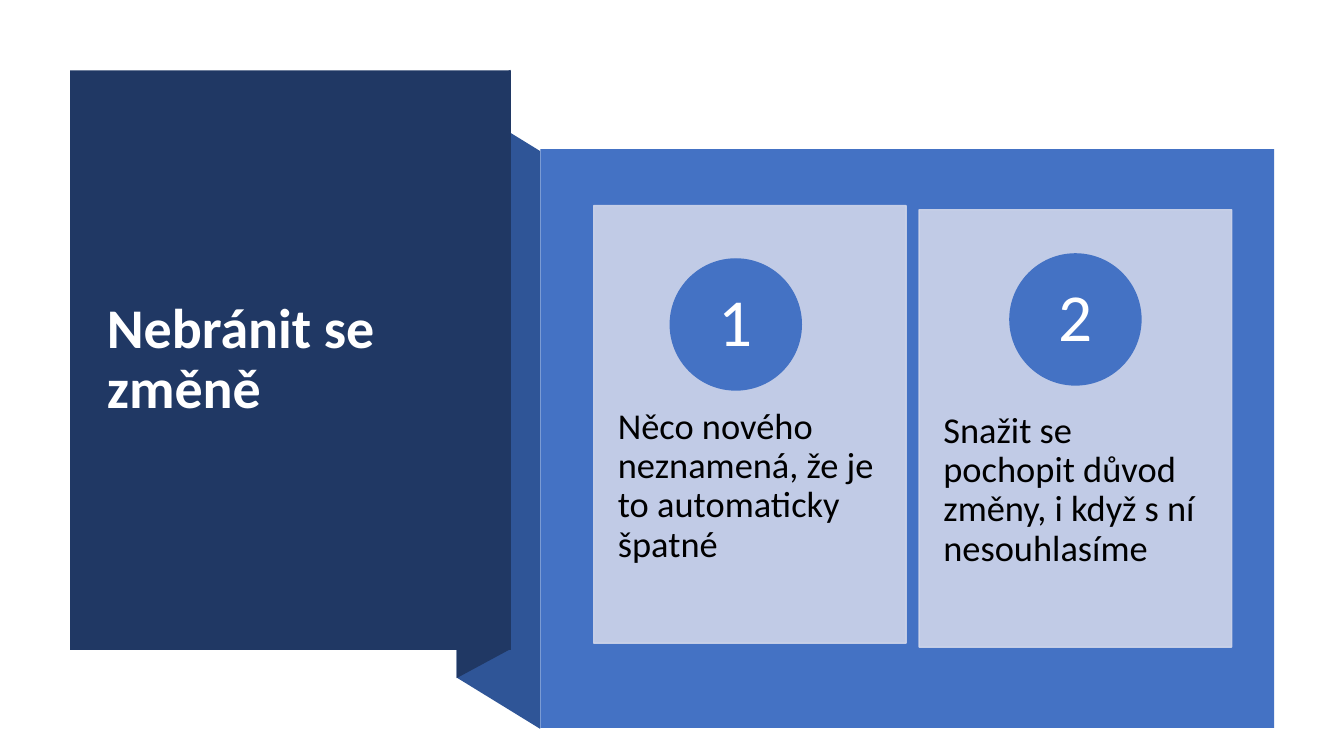
from dataclasses import dataclass

from lxml.etree import SubElement
from pptx import Presentation
from pptx.dml.color import RGBColor
from pptx.enum.shapes import MSO_SHAPE
from pptx.enum.text import MSO_ANCHOR, MSO_AUTO_SIZE, PP_ALIGN
from pptx.oxml.ns import qn
from pptx.util import Pt

COLORS = {
    "navy": "203864",
    "fold": "2F5597",
    "blue": "4472C4",
    "card": "CFD5EA",
    "white": "FFFFFF",
    "black": "000000",
}
FONT = "Calibri"
CARD_W, CARD_H = 223.2, 312.5
CIRCLE = 93.6
BODY_DROP, BODY_H = 118.5, 187.2


@dataclass
class Card:
    number: str
    text: str
    left: float
    top: float
    circle_left: float
    circle_top: float


CARDS = [
    Card("1", "Něco nového neznamená, že je to automaticky špatné",
         424.1, 146.9, 478.8, 185),
    Card("2", "Snažit se pochopit důvod změny, i když s ní nesouhlasíme",
         656.6, 149.8, 721.4, 181.4),
]


def rgb(name: str) -> RGBColor:
    return RGBColor.from_string(COLORS[name])


def paint(sp, color: str, outlined: bool = False) -> None:
    sp.shadow.inherit = False
    sp.fill.solid()
    sp.fill.fore_color.rgb = rgb(color)
    if outlined:
        sp.line.color.rgb = rgb(color)
        sp.line.width = Pt(1)
    else:
        sp.line.fill.background()


def set_alpha(sp, percent: int) -> None:
    """Make the fill and the line of a painted shape partly transparent."""
    for clr in sp.element.spPr.iter(qn("a:srgbClr")):
        SubElement(clr, qn("a:alpha")).set("val", str(percent * 1000))


def add_box(shapes, kind, left: float, top: float, width: float, height: float,
            color: str, outlined: bool = False):
    sp = shapes.add_shape(kind, Pt(left), Pt(top), Pt(width), Pt(height))
    paint(sp, color, outlined)
    return sp


def add_polygon(shapes, points: list[tuple[float, float]], color: str) -> None:
    start, *rest = [(Pt(x), Pt(y)) for x, y in points]
    builder = shapes.build_freeform(*start)
    builder.add_line_segments(rest, close=True)
    paint(builder.convert_to_shape(), color)


def write(sp, text: str, size: float, color: str, align=PP_ALIGN.LEFT,
          anchor=MSO_ANCHOR.MIDDLE, insets=(7.2, 3.6), bold: bool = False) -> None:
    tf = sp.text_frame
    tf.text = text
    tf.word_wrap = True
    tf.auto_size = MSO_AUTO_SIZE.NONE
    tf.vertical_anchor = anchor
    tf.margin_left = tf.margin_right = Pt(insets[0])
    tf.margin_top = tf.margin_bottom = Pt(insets[1])
    p = tf.paragraphs[0]
    p.alignment = align
    p.line_spacing = 0.9
    font = p.runs[0].font
    font.name, font.size, font.bold = FONT, Pt(size), bold
    font.color.rgb = rgb(color)


def add_card(shapes, card: Card) -> None:
    sp = add_box(shapes, MSO_SHAPE.RECTANGLE, card.left, card.top,
                 CARD_W, CARD_H, "card", outlined=True)
    set_alpha(sp, 90)
    body = shapes.add_textbox(Pt(card.left), Pt(card.top + BODY_DROP),
                              Pt(CARD_W), Pt(BODY_H))
    write(body, card.text, 26, "black", anchor=MSO_ANCHOR.TOP, insets=(17.3, 25.9))
    circle = add_box(shapes, MSO_SHAPE.OVAL, card.circle_left, card.circle_top,
                     CIRCLE, CIRCLE, "blue", outlined=True)
    write(circle, card.number, 48, "white", align=PP_ALIGN.CENTER, insets=(7.2, 0.7))


def add_title(s) -> None:
    title = s.shapes.title
    title.left, title.top = Pt(69.1), Pt(77.8)
    title.width, title.height = Pt(267.1), Pt(359.3)
    write(title, "Nebránit se změně", 40, "white", bold=True)
    # Bring the title in front of the navy panel
    title.element.getparent().append(title.element)


def main() -> None:
    prs = Presentation()
    prs.slide_width, prs.slide_height = Pt(960), Pt(540)
    s = prs.slides.add_slide(prs.slide_layouts[5])
    shapes = s.shapes

    add_polygon(shapes, [(385.9, 520.7), (326.2, 484), (326.2, 71.3), (385.9, 108)], "fold")
    add_polygon(shapes, [(364.6, 463.7), (326.2, 484.4), (326.2, 70.6), (364.6, 49.9)], "navy")
    add_box(shapes, MSO_SHAPE.RECTANGLE, 50, 50.2, 315, 414, "navy")
    add_title(s)
    add_box(shapes, MSO_SHAPE.RECTANGLE, 385.9, 106.6, 524.2, 413.4, "blue")
    for card in CARDS:
        add_card(shapes, card)

    prs.save("out.pptx")


if __name__ == "__main__":
    main()
